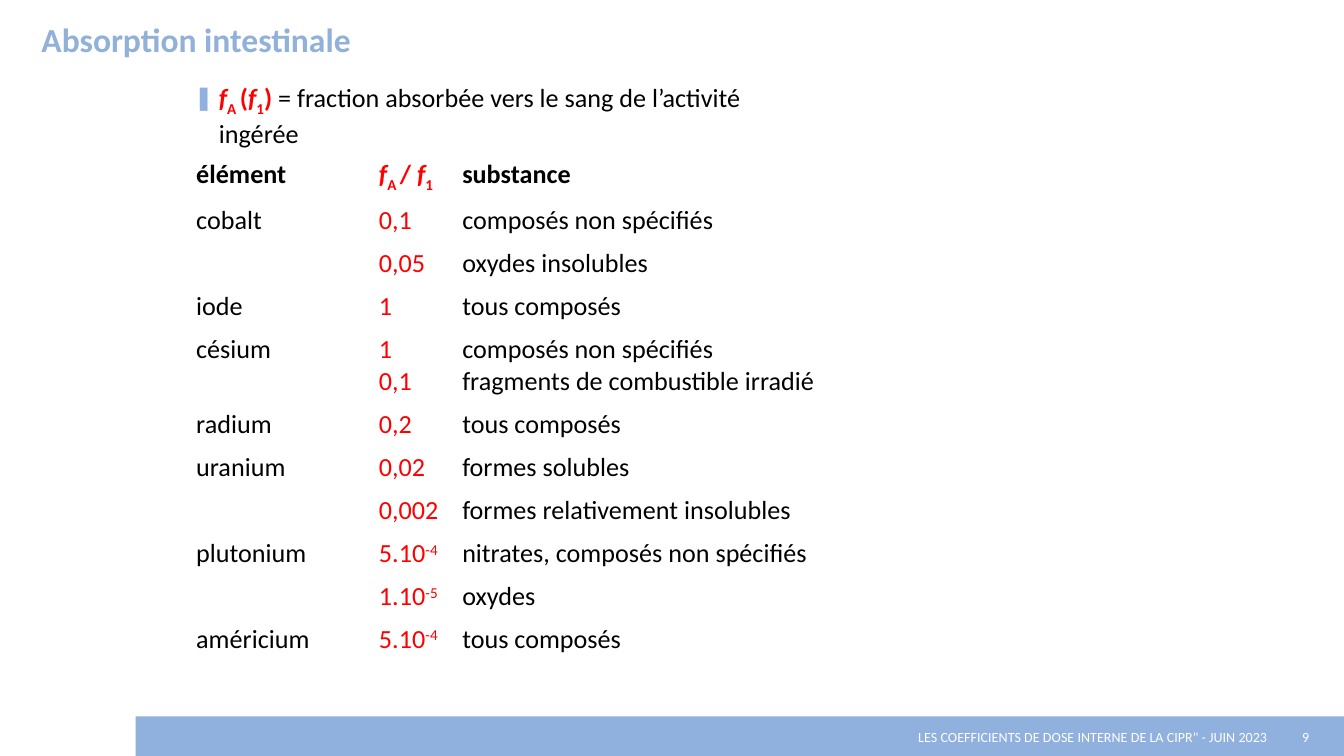
from typing import NamedTuple

from lxml import etree
from pptx import Presentation
from pptx.dml.color import RGBColor
from pptx.enum.shapes import MSO_SHAPE
from pptx.enum.text import MSO_ANCHOR, PP_ALIGN
from pptx.oxml.ns import qn
from pptx.util import Inches, Pt

RECTANGLE = MSO_SHAPE.RECTANGLE
TOP, MIDDLE = MSO_ANCHOR.TOP, MSO_ANCHOR.MIDDLE
LEFT, CENTER, RIGHT = PP_ALIGN.LEFT, PP_ALIGN.CENTER, PP_ALIGN.RIGHT

BLACK = RGBColor(0x00, 0x00, 0x00)
WHITE = RGBColor(0xFF, 0xFF, 0xFF)
RED = RGBColor(0xFF, 0x00, 0x00)
BAR_BLUE = RGBColor(0x90, 0xB0, 0xDD)
TITLE_BLUE = RGBColor(0x91, 0xB1, 0xD9)

SLIDE_WIDTH = 10
SLIDE_HEIGHT = SLIDE_WIDTH * 9 / 16
FONT = "Calibri"
BODY_SIZE = 14
SUBSCRIPT, SUPERSCRIPT = -25, 30


class Piece(NamedTuple):
    """A stretch of text; baseline is its shift in percent."""
    text: str
    baseline: int = 0
    italic: bool = False
    bold: bool | None = None
    color: RGBColor | None = None


class Style(NamedTuple):
    size: float = BODY_SIZE
    color: RGBColor = BLACK
    bold: bool = False
    align: PP_ALIGN = LEFT


class Substance(NamedTuple):
    element: str
    fractions: list[list[Piece]]
    names: list[str]


def power(mantissa: int, exponent: int) -> list[Piece]:
    return [Piece(f"{mantissa}.10"), Piece(str(exponent), SUPERSCRIPT)]


F = Piece("f", italic=True)
SUB_A = Piece("A ", SUBSCRIPT)
SUB_1 = Piece("1", SUBSCRIPT)
HEADER = Substance("élément", [[F, SUB_A, Piece("/ "), F, SUB_1]], ["substance"])
SUBSTANCES = [
    Substance("cobalt", [[Piece("0,1")]], ["composés non spécifiés"]),
    Substance("", [[Piece("0,05")]], ["oxydes insolubles"]),
    Substance("iode", [[Piece("1")]], ["tous composés"]),
    Substance("césium", [[Piece("1")], [Piece("0,1")]],
              ["composés non spécifiés", "fragments de combustible irradié"]),
    Substance("radium", [[Piece("0,2")]], ["tous composés"]),
    Substance("uranium", [[Piece("0,02")]], ["formes solubles"]),
    Substance("", [[Piece("0,002")]], ["formes relativement insolubles"]),
    Substance("plutonium", [power(5, -4)], ["nitrates, composés non spécifiés"]),
    Substance("", [power(1, -5)], ["oxydes"]),
    Substance("américium", [power(5, -4)], ["tous composés"]),
]
COLUMN_WIDTHS = (1.36, 0.62, 4.36)
ROW_HEIGHT, DOUBLE_ROW_HEIGHT = 0.32, 0.56


def write(paragraph, pieces: list[Piece], style: Style) -> None:
    paragraph.alignment = style.align
    font = paragraph.font
    font.name, font.size, font.bold = FONT, Pt(style.size), style.bold
    font.color.rgb = style.color
    for piece in pieces:
        run = paragraph.add_run()
        run.text = piece.text
        if piece.italic:
            run.font.italic = True
        if piece.bold is not None:
            run.font.bold = piece.bold
        if piece.color is not None:
            run.font.color.rgb = piece.color
        if piece.baseline:
            run.font._element.set("baseline", str(piece.baseline * 1000))


def add_text_box(slide, left: float, top: float, width: float, height: float,
                 anchor: MSO_ANCHOR, side_inset: float = 0.1):
    """Add an empty wrapping box and return its text frame."""
    box = slide.shapes.add_textbox(Inches(left), Inches(top), Inches(width), Inches(height))
    frame = box.text_frame
    frame.word_wrap = True
    frame.vertical_anchor = anchor
    frame.margin_left = frame.margin_right = Inches(side_inset)
    return frame


def add_bullet(paragraph) -> None:
    properties = paragraph._p.get_or_add_pPr()
    properties.set("marL", str(Inches(0.14)))
    properties.set("indent", str(-Inches(0.14)))
    color = etree.SubElement(properties, qn("a:buClr"))
    etree.SubElement(color, qn("a:srgbClr"), val=str(BAR_BLUE))
    etree.SubElement(properties, qn("a:buSzPct"), val="75000")
    etree.SubElement(properties, qn("a:buFont"), typeface=FONT)
    etree.SubElement(properties, qn("a:buChar"), char="▌")


def fill_cell(cell, lines: list[list[Piece]], style: Style) -> None:
    cell.fill.background()
    cell.margin_left = cell.margin_right = Inches(0.07)
    cell.margin_top = cell.margin_bottom = Inches(0.04)
    cell.vertical_anchor = TOP
    frame = cell.text_frame
    for index, pieces in enumerate(lines):
        paragraph = frame.add_paragraph() if index else frame.paragraphs[0]
        write(paragraph, pieces, style)
        if not pieces:  # keeps an empty cell from stretching its row
            etree.SubElement(paragraph._p, qn("a:endParaRPr"), sz=str(BODY_SIZE * 100))


def add_absorption_table(slide) -> None:
    rows = [HEADER, *SUBSTANCES]
    heights = [DOUBLE_ROW_HEIGHT if len(row.names) > 1 else ROW_HEIGHT for row in rows]
    table = slide.shapes.add_table(
        len(rows), len(COLUMN_WIDTHS), Inches(1.39), Inches(1.14),
        Inches(sum(COLUMN_WIDTHS)), Inches(sum(heights))).table
    table.first_row = table.horz_banding = False
    for column, width in zip(table.columns, COLUMN_WIDTHS):
        column.width = Inches(width)
    for index, (row, height) in enumerate(zip(rows, heights)):
        table.rows[index].height = Inches(height)
        plain = Style(bold=row is HEADER)
        element = [Piece(row.element)] if row.element else []
        fill_cell(table.cell(index, 0), [element], plain)
        fill_cell(table.cell(index, 1), row.fractions, plain._replace(color=RED))
        fill_cell(table.cell(index, 2), [[Piece(name)] for name in row.names], plain)


def add_footer(slide) -> None:
    top, height = 5.33, 0.3
    bar = slide.shapes.add_shape(RECTANGLE, Inches(1.01), Inches(top), Inches(8.99), Inches(height))
    bar.shadow.inherit = False
    bar.fill.solid()
    bar.fill.fore_color.rgb = BAR_BLUE
    bar.line.fill.background()

    style = Style(7.5, WHITE, align=RIGHT)
    event = add_text_box(slide, 2.77, top, 6.66, height, MIDDLE, side_inset=0)
    write(event.paragraphs[0],
          [Piece('LES COEFFICIENTS DE DOSE INTERNE DE LA CIPR" - JUIN 2023')], style)
    number = add_text_box(slide, 9.43, top, 0.57, height, MIDDLE)
    write(number.paragraphs[0], [Piece("9")], style._replace(align=CENTER))


def main() -> None:
    presentation = Presentation()
    presentation.slide_width = Inches(SLIDE_WIDTH)
    presentation.slide_height = Inches(SLIDE_HEIGHT)
    slide = presentation.slides.add_slide(presentation.slide_layouts[6])

    add_footer(slide)
    add_absorption_table(slide)

    title = add_text_box(slide, 0.21, 0.09, 4.79, 0.47, TOP)
    write(title.paragraphs[0], [Piece("Absorption intestinale")], Style(18, TITLE_BLUE, True))

    definition = add_text_box(slide, 1.39, 0.56, 4.79, 0.57, TOP).paragraphs[0]
    add_bullet(definition)
    meaning = Piece("= fraction absorbée vers le sang de l’activité ingérée",
                    bold=False, color=BLACK)
    write(definition, [F, SUB_A, Piece("("), F, SUB_1, Piece(") "), meaning],
          Style(color=RED, bold=True))

    presentation.save("out.pptx")


if __name__ == "__main__":
    main()
